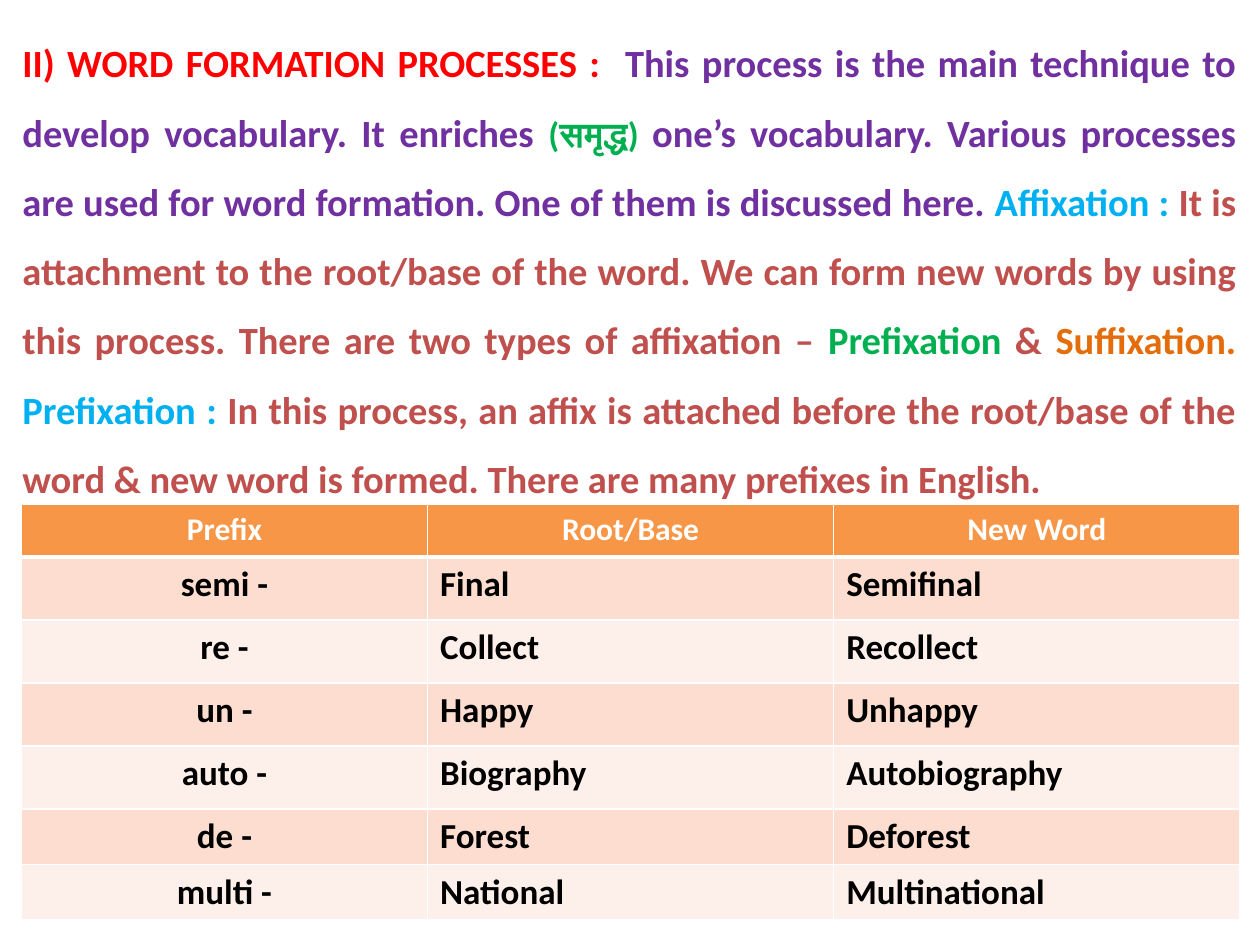
from dataclasses import dataclass

from lxml.etree import SubElement
from pptx import Presentation
from pptx.dml.color import RGBColor as Color
from pptx.enum.text import MSO_AUTO_SIZE as AutoSize, PP_ALIGN as Align
from pptx.oxml.ns import qn
from pptx.util import Inches, Pt


@dataclass(frozen=True)
class Theme:
    font: str = "Calibri"
    body_size: int = 22
    gloss_size: int = 20
    header_size: int = 18
    cell_size: int = 20
    white: str = "FFFFFF"
    black: str = "000000"
    red: str = "FF0000"
    purple: str = "7030A0"
    green: str = "00B050"
    blue: str = "00B0F0"
    brick: str = "C0504D"
    orange: str = "E46C0A"
    header_fill: str = "F79646"
    band_fills: tuple = ("FCDDCF", "FDEFE9")


THEME = Theme()

PASSAGE = [
    ("II) WORD FORMATION PROCESSES :  ", THEME.red),
    ("This process is the main technique to develop vocabulary. It enriches ", THEME.purple),
    ("(समृद्ध) ", THEME.green, THEME.gloss_size),
    ("one’s vocabulary. Various processes are used for word formation. "
     "One of them is discussed here. ", THEME.purple),
    ("Affixation : ", THEME.blue),
    ("It is attachment to the root/base of the word. We can form new words by using "
     "this process. There are two types of affixation – ", THEME.brick),
    ("Prefixation", THEME.green),
    (" & ", THEME.brick),
    ("Suffixation. ", THEME.orange),
    ("Prefixation : ", THEME.blue),
    ("In this process, an affix is attached before the root/base of the word & new word "
     "is formed. There are many prefixes in English.", THEME.brick),
]

PREFIX_TABLE = [
    ("Prefix", "Root/Base", "New Word"),
    ("semi -", "Final", "Semifinal"),
    ("re -", "Collect", "Recollect"),
    ("un -", "Happy", "Unhappy"),
    ("auto -", "Biography", "Autobiography"),
    ("de -", "Forest", "Deforest"),
    ("multi -", "National", "Multinational"),
]
ROW_HEIGHTS = [0.42, 0.5, 0.5, 0.5, 0.5, 0.42, 0.37]


def add_text(paragraph, text, *, size, color, bold=True, font=THEME.font):
    run = paragraph.add_run()
    run.text = text
    run.font.name = font
    run.font.size = Pt(size)
    run.font.bold = bold
    run.font.color.rgb = Color.from_string(color)


def set_borders(cell, color, bottom_width=1):
    properties = cell._tc.get_or_add_tcPr()
    widths = {"a:lnL": 1, "a:lnR": 1, "a:lnT": 1, "a:lnB": bottom_width}
    for position, (side, width) in enumerate(widths.items()):
        line = SubElement(properties, qn(side), w=str(Pt(width)))
        fill = SubElement(line, qn("a:solidFill"))
        SubElement(fill, qn("a:srgbClr"), val=color)
        properties.insert(position, line)


class SlideBuilder:
    def __init__(self, slide, theme):
        self.slide = slide
        self.theme = theme

    def passage(self, left, top, width, height, pieces):
        shape = self.slide.shapes.add_textbox(
            Inches(left), Inches(top), Inches(width), Inches(height))
        frame = shape.text_frame
        frame.word_wrap = True
        frame.auto_size = AutoSize.SHAPE_TO_FIT_TEXT
        paragraph = frame.paragraphs[0]
        paragraph.alignment = Align.JUSTIFY
        paragraph.line_spacing = 1.5
        for text, color, *size in pieces:
            add_text(paragraph, text, color=color,
                     size=size[0] if size else self.theme.body_size)

    def table(self, left, top, width, rows, heights):
        shape = self.slide.shapes.add_table(
            len(rows), len(rows[0]), Inches(left), Inches(top),
            Inches(width), Inches(sum(heights)))
        table = shape.table
        for row, height in zip(table.rows, heights):
            row.height = Inches(height)
        for row_index, texts in enumerate(rows):
            for column_index, text in enumerate(texts):
                self.cell(table.cell(row_index, column_index), text, row_index, column_index)

    def cell(self, cell, text, row_index, column_index):
        theme = self.theme
        header = row_index == 0
        fill = theme.header_fill if header else theme.band_fills[(row_index - 1) % 2]
        cell.fill.solid()
        cell.fill.fore_color.rgb = Color.from_string(fill)
        set_borders(cell, theme.white, bottom_width=3 if header else 1)
        paragraph = cell.text_frame.paragraphs[0]
        paragraph.alignment = Align.CENTER if header or column_index == 0 else Align.LEFT
        add_text(paragraph, text,
                 size=theme.header_size if header else theme.cell_size,
                 color=theme.white if header else theme.black)


def main():
    presentation = Presentation()
    presentation.slide_width = Inches(10)
    presentation.slide_height = Inches(7.5)
    slide = presentation.slides.add_slide(presentation.slide_layouts[6])
    builder = SlideBuilder(slide, THEME)
    builder.table(0.17, 4, 9.67, PREFIX_TABLE, ROW_HEIGHTS)
    builder.passage(0.08, 0.08, 9.83, 4.44, PASSAGE)
    presentation.save("out.pptx")


if __name__ == "__main__":
    main()
